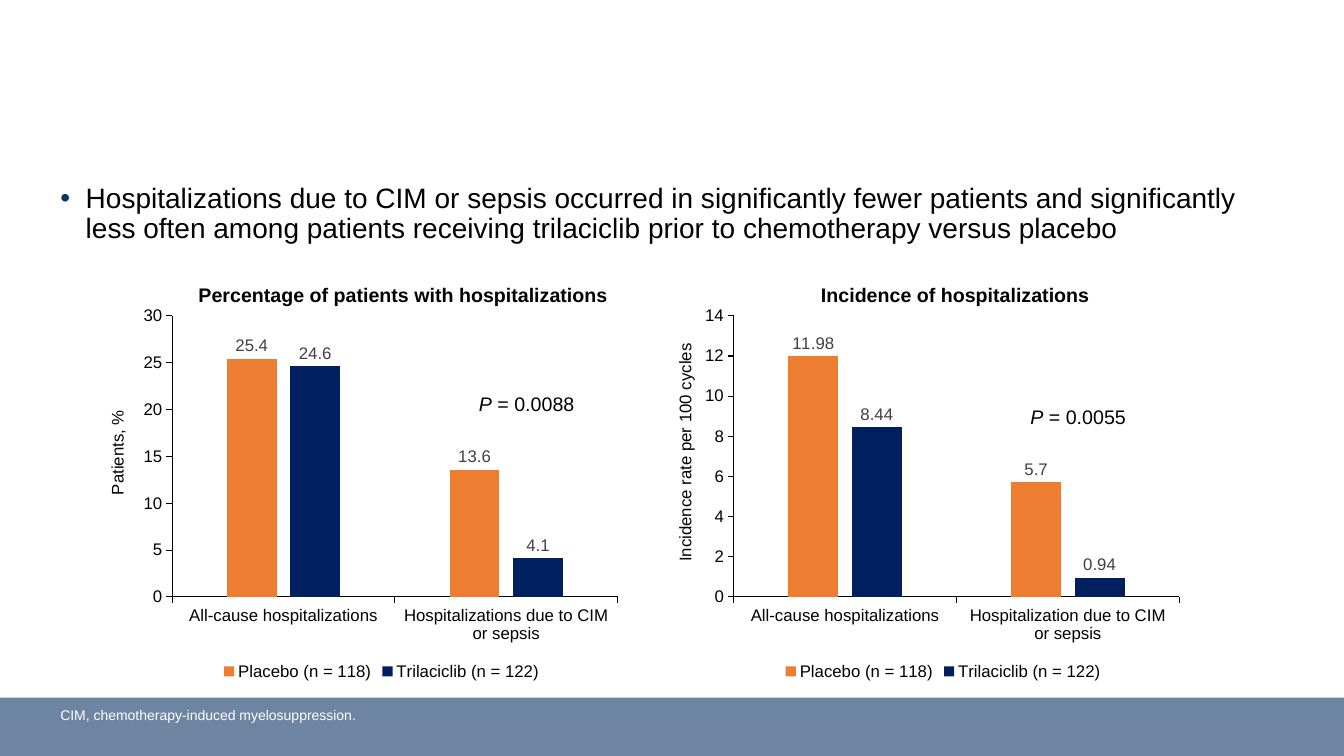
from lxml.etree import SubElement
from pptx import Presentation
from pptx.chart.data import CategoryChartData
from pptx.dml.color import RGBColor
from pptx.enum.chart import XL_CHART_TYPE, XL_LABEL_POSITION, XL_LEGEND_POSITION, XL_TICK_MARK
from pptx.enum.shapes import MSO_SHAPE
from pptx.enum.text import MSO_ANCHOR, PP_ALIGN
from pptx.oxml import parse_xml
from pptx.oxml.ns import nsdecls, qn
from pptx.util import Inches, Pt

FONT = "Arial"
BLACK, WHITE, BLUE = "000000", "FFFFFF", "0C3467"
SERIES = [("Placebo (n = 118)", "ED7D31"), ("Trilaciclib (n = 122)", "002060")]


def color(hex_string):
    return RGBColor.from_string(hex_string)


def set_font(font, size, hex_color=BLACK, bold=False, italic=False):
    font.name, font.size = FONT, Pt(size)
    font.bold, font.italic = bold, italic
    font.color.rgb = color(hex_color)


def place(sp, box):
    sp.left, sp.top, sp.width, sp.height = (Inches(v) for v in box)


def set_inset(tf, x, y):
    tf.margin_left = tf.margin_right = Inches(x)
    tf.margin_top = tf.margin_bottom = Inches(y)


def add_text(s, box, text, size=12, hex_color=BLACK, bold=False, align=PP_ALIGN.LEFT,
             italic_start="", inset=(0.1, 0.05), rotation=0, line_spacing=1.0):
    sp = s.shapes.add_textbox(*(Inches(v) for v in box))
    sp.rotation = rotation
    tf = sp.text_frame
    tf.word_wrap = True
    set_inset(tf, *inset)
    p = tf.paragraphs[0]
    p.alignment, p.line_spacing = align, line_spacing
    for part, italic in ((italic_start, True), (text, False)):
        if part:
            r = p.add_run()
            r.text = part
            set_font(r.font, size, hex_color, bold, italic)


def add_footer(s, left, top, width, height):
    # Translucent band with the abbreviation note
    band = s.shapes.add_shape(MSO_SHAPE.RECTANGLE, *(Inches(v) for v in (left, top, width, height)))
    band.shadow.inherit = False
    band.fill.solid()
    band.fill.fore_color.rgb = color(BLUE)
    band.line.fill.background()
    srgb = band.fill._xPr.find(".//" + qn("a:srgbClr"))
    SubElement(srgb, qn("a:alpha"), val="60000")
    add_text(s, (left + 0.5, top + 0.04, 6.2, 0.27),
             "CIM, chemotherapy-induced myelosuppression.", size=10, hex_color=WHITE)


def add_key_message(s, box, text):
    # Bulleted body placeholder
    body = s.placeholders[1]
    place(body, box)
    tf = body.text_frame
    set_inset(tf, 0, 0)
    tf.vertical_anchor = MSO_ANCHOR.TOP
    p = tf.paragraphs[0]
    pPr = p._p.get_or_add_pPr()
    pPr.set("marL", str(Inches(0.25)))
    pPr.set("indent", str(-Inches(0.25)))
    SubElement(SubElement(pPr, qn("a:buClr")), qn("a:srgbClr"), val=BLUE)
    SubElement(pPr, qn("a:buFont"), typeface=FONT)
    SubElement(pPr, qn("a:buChar"), char="•")
    p.line_spacing, p.space_before, p.space_after = 0.9, Pt(0), Pt(6)
    r = p.add_run()
    r.text = text
    set_font(r.font, 20)


def format_axis(axis):
    axis.has_major_gridlines = False
    axis.major_tick_mark = XL_TICK_MARK.OUTSIDE
    axis.minor_tick_mark = XL_TICK_MARK.NONE
    axis.format.line.color.rgb = color(BLACK)
    axis.format.line.width = Pt(0.75)
    set_font(axis.tick_labels.font, 12)


def set_plot_layout(chart, **fractions):
    # Fix the inner plot area within the chart frame
    plot_area = chart._chartSpace.chart.plotArea
    for old in plot_area.findall(qn("c:layout")):
        plot_area.remove(old)
    sizes = "".join(f'<c:{k} val="{v}"/>' for k, v in fractions.items())
    plot_area.insert(0, parse_xml(
        f'<c:layout {nsdecls("c")}><c:manualLayout><c:layoutTarget val="inner"/>'
        f'<c:xMode val="edge"/><c:yMode val="edge"/>{sizes}</c:manualLayout></c:layout>'))


def add_bar_chart(s, box, categories, values, maximum, step):
    data = CategoryChartData()
    data.categories = categories
    for (name, _), vals in zip(SERIES, values):
        data.add_series(name, vals)
    chart = s.shapes.add_chart(XL_CHART_TYPE.COLUMN_CLUSTERED,
                               *(Inches(v) for v in box), data).chart
    chart.has_title = False
    set_font(chart.font, 10)
    set_plot_layout(chart, x=0.077, y=0.043, w=0.9, h=0.73)

    # Axes
    format_axis(chart.category_axis)
    axis = chart.value_axis
    format_axis(axis)
    axis.minimum_scale, axis.maximum_scale, axis.major_unit = 0, maximum, step

    # Legend
    chart.has_legend = True
    chart.legend.position = XL_LEGEND_POSITION.BOTTOM
    chart.legend.include_in_layout = False
    set_font(chart.legend.font, 12)

    # Bars and value labels
    plot = chart.plots[0]
    plot.gap_width, plot.overlap, plot.vary_by_categories = 219, -27, False
    for series, (_, fill) in zip(plot.series, SERIES):
        series.format.fill.solid()
        series.format.fill.fore_color.rgb = color(fill)
        series.invert_if_negative = False
        labels = series.data_labels
        labels.show_value = True
        labels.position = XL_LABEL_POSITION.OUTSIDE_END
        set_font(labels.font, 12, "404040")


def add_panel(s, left, top, title, title_box, axis_title, axis_box, p_value, p_offset, **chart):
    # One chart with its title, vertical axis title and P value
    add_bar_chart(s, (left, top, 4.91, 3.82), **chart)
    px, py = p_offset
    add_text(s, (left + px, top + py, 1.1, 0.31), f" = {p_value}", size=14,
             italic_start="P", inset=(0.04, 0.04), line_spacing=1.07)
    title_x, title_width = title_box
    add_text(s, (left + title_x, top - 0.21, title_width, 0.34), title, size=14,
             bold=True, align=PP_ALIGN.CENTER)
    axis_x, axis_length = axis_box
    add_text(s, (left + axis_x, top + 1.37, axis_length, 0.3), axis_title,
             align=PP_ALIGN.CENTER, rotation=270)


def main():
    prs = Presentation()
    prs.slide_width, prs.slide_height = Inches(13.33), Inches(7.5)
    s = prs.slides.add_slide(prs.slide_layouts[1])
    title = s.shapes.title._element
    title.getparent().remove(title)

    add_footer(s, 0, 6.92, 13.33, 0.58)
    add_key_message(s, (0.6, 1.83, 12.13, 0.85),
                    "Hospitalizations due to CIM or sepsis occurred in significantly fewer "
                    "patients and significantly less often among patients receiving "
                    "trilaciclib prior to chemotherapy versus placebo")
    add_panel(s, 1.33, 2.97, "Percentage of patients with hospitalizations", (0.5, 4.34),
              "Patients, %", (-0.77, 1.2), "0.0088", (3.38, 0.86),
              categories=["All-cause hospitalizations", "Hospitalizations due to CIM or sepsis"],
              values=[(25.4, 13.6), (24.6, 4.1)], maximum=30, step=5)
    add_panel(s, 6.9, 2.97, "Incidence of hospitalizations", (0.45, 4.25),
              "Incidence rate per 100 cycles", (-1.5, 2.78), "0.0055", (3.28, 0.99),
              categories=["All-cause hospitalizations", "Hospitalization due to CIM or sepsis"],
              values=[(11.98, 5.7), (8.44, 0.94)], maximum=14, step=2)
    prs.save("out.pptx")


if __name__ == "__main__":
    main()
